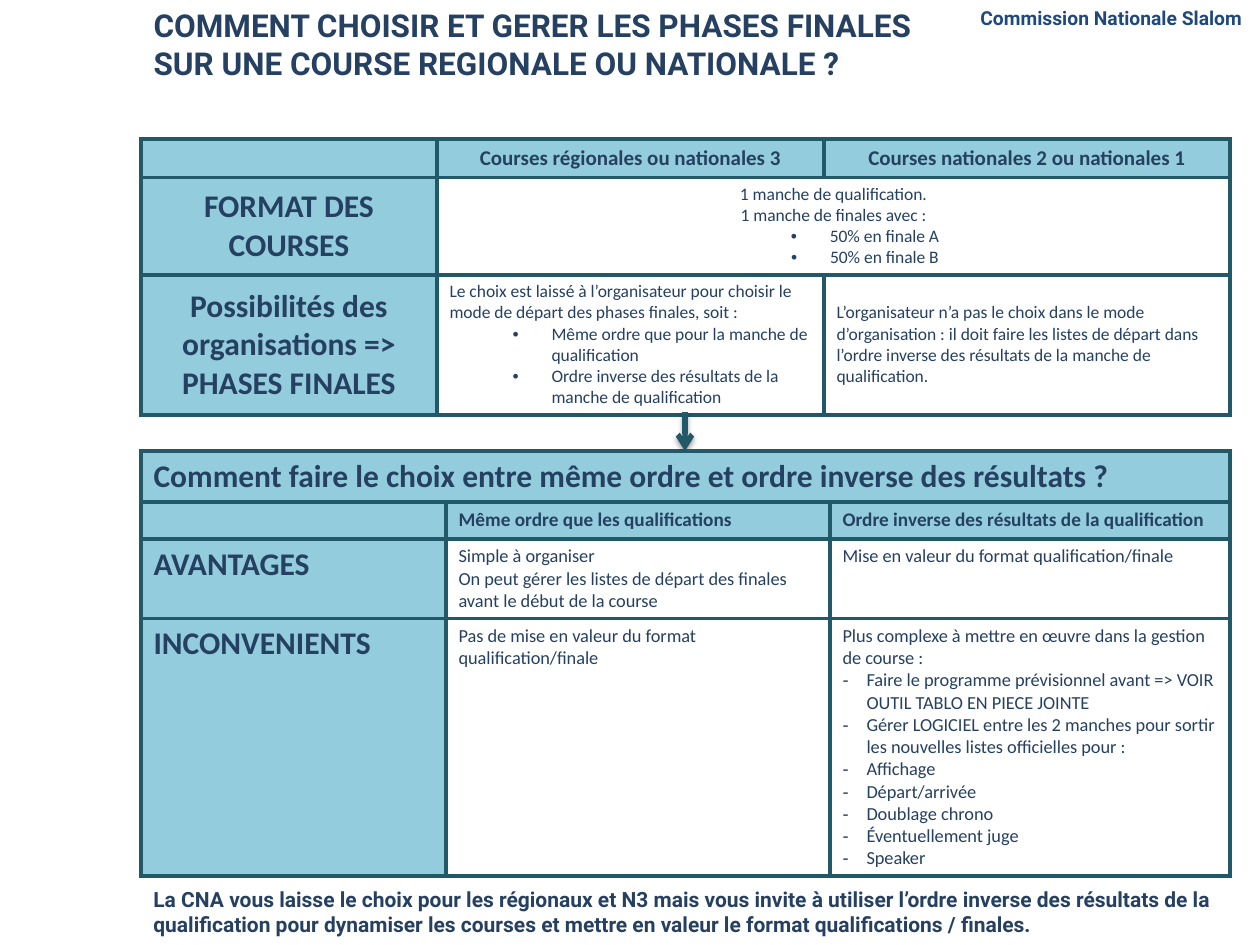
from lxml import etree
from pptx import Presentation
from pptx import util as u
from pptx.dml.color import RGBColor
from pptx.enum import shapes, text
from pptx.oxml import parse_xml
from pptx.oxml.ns import nsdecls, qn

NAVY, TEAL, SKY, WHITE, BLUE = "254061", "215968", "93CDDD", "FFFFFF", "1F497D"
BODY_FONT, TITLE_FONT = "Calibri", "Roboto"

TITLE = ("COMMENT CHOISIR ET GERER LES PHASES FINALES "
         "SUR UNE COURSE REGIONALE OU NATIONALE ?")
COMMISSION = "Commission Nationale Slalom"
ADVICE = ("La CNA vous laisse le choix pour les régionaux et N3 mais vous invite à utiliser "
          "l’ordre inverse des résultats de la qualification pour dynamiser les courses et "
          "mettre en valeur le format qualifications / finales.")

# Cell styles: size in points, bold, centred, vertically centred, fill
STYLES = {
    "race head": (12, True, True, True, SKY),
    "race label": (18, True, True, True, SKY),
    "race centred": (10, False, True, True, WHITE),
    "race text": (10, False, False, True, WHITE),
    "choice label": (18, True, False, False, SKY),
    "choice head": (11, True, False, False, SKY),
    "choice text": (10.5, False, False, False, WHITE),
}
# Bullet sign: left margin and hanging indent in px
BULLETS = {"•": (102, 39), "-": (24, 24)}

# A cell is (style, paragraphs); None continues the cell on its left.
RACES = {
    "top": 139, "columns": (296, 387, 406), "rows": (38, 96, 139),
    "cells": [
        [("race head", []),
         ("race head", ["Courses régionales ou nationales 3"]),
         ("race head", ["Courses nationales 2 ou nationales 1"])],
        [("race label", ["FORMAT DES COURSES"]),
         ("race centred", ["1 manche de qualification.",
                           "1 manche de finales avec :",
                           "• 50% en finale A",
                           "• 50% en finale B"]),
         None],
        [("race label", ["Possibilités des organisations =>", "PHASES FINALES"]),
         ("race text", ["Le choix est laissé à l’organisateur pour choisir le mode de départ "
                        "des phases finales, soit :",
                        "• Même ordre que pour la manche de qualification",
                        "• Ordre inverse des résultats de la manche de qualification"]),
         ("race text", ["L’organisateur n’a pas le choix dans le mode d’organisation : il doit "
                        "faire les listes de départ dans l’ordre inverse des résultats de la "
                        "manche de qualification."])],
    ],
}
CHOICE = {
    "top": 451, "columns": (305, 384, 400), "rows": (50, 37, 79, 255),
    "cells": [
        [("choice label", ["Comment faire le choix entre même ordre et ordre inverse "
                           "des résultats ?"]), None, None],
        [("choice head", []),
         ("choice head", ["Même ordre que les qualifications"]),
         ("choice head", ["Ordre inverse des résultats de la qualification"])],
        [("choice label", ["AVANTAGES"]),
         ("choice text", ["Simple à organiser",
                          "On peut gérer les listes de départ des finales avant le début "
                          "de la course"]),
         ("choice text", ["Mise en valeur du format qualification/finale"])],
        [("choice label", ["INCONVENIENTS"]),
         ("choice text", ["Pas de mise en valeur du format qualification/finale"]),
         ("choice text", ["Plus complexe à mettre en œuvre dans la gestion de course :",
                          "- Faire le programme prévisionnel avant => VOIR OUTIL TABLO "
                          "EN PIECE JOINTE",
                          "- Gérer LOGICIEL entre les 2 manches pour sortir les nouvelles "
                          "listes officielles pour :",
                          "- Affichage",
                          "- Départ/arrivée",
                          "- Doublage chrono",
                          "- Éventuellement juge",
                          "- Speaker"])],
    ],
}
LEFT, WIDTH = 141, 1089


def px(length):
    return u.Emu(round(length * 914400 / 126))


def colour(code):
    return RGBColor.from_string(code)


def add_span(para, words, size, font, ink=NAVY, bold=True):
    span = para.add_run()
    span.text = words
    values = {"size": u.Pt(size), "name": font, "bold": bold}
    for name, value in values.items():
        setattr(span.font, name, value)
    span.font.color.rgb = colour(ink)


def write_box(box, words, size, place, ink=NAVY, wrap=True):
    box.left, box.top, box.width, box.height = map(px, place)
    frame = box.text_frame
    frame.word_wrap = wrap
    frame.auto_size = text.MSO_AUTO_SIZE.NONE
    frame.vertical_anchor = text.MSO_ANCHOR.TOP
    frame.paragraphs[0].alignment = text.PP_ALIGN.LEFT
    add_span(frame.paragraphs[0], words, size, TITLE_FONT, ink)


def add_bullet(para, sign):
    margin, hanging = BULLETS[sign]
    properties = para._p.get_or_add_pPr()
    properties.set("marL", str(px(margin)))
    properties.set("indent", str(-px(hanging)))
    etree.SubElement(properties, qn("a:buFont"), typeface="Arial")
    etree.SubElement(properties, qn("a:buChar"), char=sign)


def add_borders(cell):
    properties = cell._tc.get_or_add_tcPr()
    for side in ("lnL", "lnR", "lnT", "lnB"):
        properties.append(parse_xml(
            f'<a:{side} {nsdecls("a")} w="{u.Pt(2.25)}"><a:solidFill>'
            f'<a:srgbClr val="{TEAL}"/></a:solidFill></a:{side}>'))


def fill_cell(cell, style, lines):
    size, bold, centred, middle, fill = STYLES[style]
    add_borders(cell)
    cell.fill.solid()
    cell.fill.fore_color.rgb = colour(fill)
    cell.vertical_anchor = text.MSO_ANCHOR.MIDDLE if middle else text.MSO_ANCHOR.TOP
    frame = cell.text_frame
    for number, line in enumerate(lines):
        para = frame.add_paragraph() if number else frame.paragraphs[0]
        para.alignment = text.PP_ALIGN.CENTER if centred else text.PP_ALIGN.LEFT
        sign, _, rest = line.partition(" ")
        if sign in BULLETS:
            add_bullet(para, sign)
            line = rest
        add_span(para, line, size, BODY_FONT, bold=bold)
    if not lines:  # keeps an empty cell from stretching its row
        etree.SubElement(frame.paragraphs[0]._p, qn("a:endParaRPr"), sz=str(size * 100))


def add_grid(page, content):
    columns, rows, cells = content["columns"], content["rows"], content["cells"]
    table = page.shapes.add_table(len(rows), len(columns), px(LEFT), px(content["top"]),
                                  px(sum(columns)), px(sum(rows))).table
    table.first_row = table.horz_banding = False
    for column, width in zip(table.columns, columns):
        column.width = px(width)
    for row, height in zip(table.rows, rows):
        row.height = px(height)
    for r, row in enumerate(cells):
        for c, entry in enumerate(row):
            if entry:
                start, style = c, entry[0]
                fill_cell(table.cell(r, c), *entry)
            else:
                fill_cell(table.cell(r, c), style, [])
                if c + 1 == len(row):
                    table.cell(r, start).merge(table.cell(r, c))


def add_arrow(page, x, top, bottom):
    arrow = page.shapes.add_connector(shapes.MSO_CONNECTOR.STRAIGHT,
                                      px(x), px(top), px(x), px(bottom))
    arrow.line.color.rgb = colour(TEAL)
    arrow.line.width = u.Pt(3)
    etree.SubElement(arrow.line._get_or_add_ln(), qn("a:tailEnd"), type="arrow")
    arrow._element.spPr.append(parse_xml(
        f'<a:effectLst {nsdecls("a")}><a:outerShdw blurRad="{u.Pt(3.1)}" dist="{u.Pt(1.6)}" '
        'dir="5400000" rotWithShape="0"><a:srgbClr val="000000"><a:alpha val="38000"/>'
        '</a:srgbClr></a:outerShdw></a:effectLst>'))


def main():
    deck = Presentation()
    deck.slide_width, deck.slide_height = px(1260), px(945)
    page = deck.slides.add_slide(deck.slide_layouts[5])
    write_box(page.shapes.title, TITLE, 18, (LEFT, 0, 838, 89))
    write_box(page.shapes.add_textbox(0, 0, 0, 0), COMMISSION, 11,
              (968, 0, 292, 36), BLUE, wrap=False)
    add_grid(page, RACES)
    add_arrow(page, LEFT + WIDTH // 2, RACES["top"] + sum(RACES["rows"]), CHOICE["top"])
    add_grid(page, CHOICE)
    write_box(page.shapes.add_textbox(0, 0, 0, 0), ADVICE, 12, (LEFT, 880, WIDTH, 63))
    deck.save("out.pptx")


if __name__ == "__main__":
    main()
